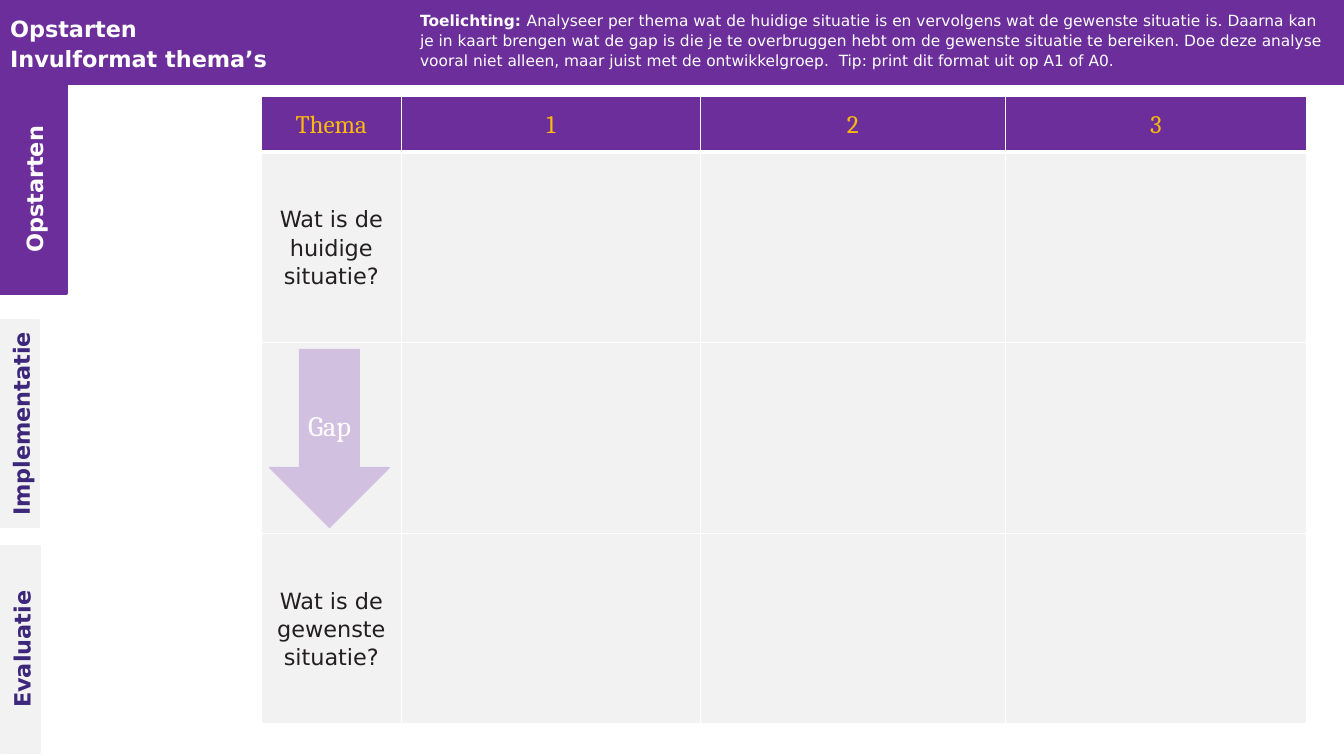
from dataclasses import dataclass

from lxml.etree import SubElement
from pptx import Presentation
from pptx.dml.color import RGBColor
from pptx.enum.shapes import MSO_SHAPE as Shape
from pptx.enum.text import MSO_ANCHOR as Anchor, MSO_AUTO_SIZE as AutoSize, PP_ALIGN as Align
from pptx.oxml.ns import qn
from pptx.util import Pt

COLORS = {
    "purple": "6C2E9B",
    "indigo": "3C277B",
    "lilac": "D2C0E0",
    "gray": "F2F2F2",
    "gold": "FAB90B",
    "ink": "231F20",
    "white": "FFFFFF",
}
SANS, SERIF = "DejaVu Sans", "Cambria"


@dataclass
class TextStyle:
    size: float
    color: str
    font: str = SANS
    bold: bool = False
    align: Align = Align.CENTER


@dataclass
class Block:
    text: str
    left: float
    top: float
    width: float
    height: float
    fill: str
    style: TextStyle
    line_width: float = 1
    shape: Shape = Shape.RECTANGLE
    vertical: bool = True


TITLE = TextStyle(16, "white", bold=True, align=Align.LEFT)
NOTE = TextStyle(11, "white", align=Align.LEFT)
HEADER = TextStyle(18, "gold", SERIF)
QUESTION = TextStyle(16, "ink")
ACTIVE_TAB = TextStyle(16, "white", bold=True)
TAB = TextStyle(16, "indigo", bold=True)

TABS = [
    Block("Implementatie", 0, 228.5, 28, 148.5, "gray", TAB),
    Block("Evaluatie", 0.5, 389.5, 28, 148.5, "gray", TAB),
    Block("Opstarten", 0, 61, 47, 148.5, "purple", ACTIVE_TAB, line_width=3),
]
GAP_ARROW = Block("Gap", 192.7, 249.7, 85.3, 127, "lilac", TextStyle(20, "white", SERIF),
                  shape=Shape.DOWN_ARROW, vertical=False)

ROWS = [
    ["Thema", "1", "2", "3"],
    ["Wat is de huidige situatie?", "", "", ""],
    ["", "", "", ""],
    ["Wat is de gewenste situatie?", "", "", ""],
]
COLUMN_WIDTHS = [100.4, 213.4, 218, 215]
ROW_HEIGHTS = [39.4, 136.2, 136.2, 136.2]


def rgb(name: str) -> RGBColor:
    return RGBColor.from_string(COLORS[name])


def style_text(tf, style: TextStyle) -> None:
    for p in tf.paragraphs:
        p.alignment = style.align
        p.line_spacing = 1.1
        for r in p.runs:
            r.font.name = style.font
            r.font.size = Pt(style.size)
            r.font.bold = style.bold
            r.font.color.rgb = rgb(style.color)


def paint(sp, color: str, line_width: float) -> None:
    sp.fill.solid()
    sp.fill.fore_color.rgb = rgb(color)
    sp.line.color.rgb = rgb(color)
    sp.line.width = Pt(line_width)


def place(sp, left: float, top: float, width: float, height: float) -> None:
    sp.left, sp.top, sp.width, sp.height = map(Pt, (left, top, width, height))


def add_title(slide) -> None:
    sp = slide.shapes.title
    place(sp, 0, 0, 960, 60.5)
    paint(sp, "purple", 1)
    tf = sp.text_frame
    tf.text = "Opstarten\nInvulformat thema’s"
    tf.auto_size = AutoSize.NONE
    tf.vertical_anchor = Anchor.MIDDLE
    style_text(tf, TITLE)


def add_block(slide, block: Block) -> None:
    sp = slide.shapes.add_shape(block.shape, Pt(block.left), Pt(block.top),
                                Pt(block.width), Pt(block.height))
    sp.shadow.inherit = False
    paint(sp, block.fill, block.line_width)
    tf = sp.text_frame
    tf.text = block.text
    tf.word_wrap = True
    tf.vertical_anchor = Anchor.MIDDLE
    if block.vertical:
        tf._txBody.bodyPr.set("vert", "vert270")
    else:
        tf.margin_left = tf.margin_right = tf.margin_top = tf.margin_bottom = Pt(3)
    style_text(tf, block.style)


def add_explanation(slide) -> None:
    tf = slide.shapes.add_textbox(Pt(293), Pt(3), Pt(668), Pt(50)).text_frame
    tf.word_wrap = True
    tf.auto_size = AutoSize.SHAPE_TO_FIT_TEXT
    p = tf.paragraphs[0]
    label, body = p.add_run(), p.add_run()
    label.text = "Toelichting: "
    body.text = (
        "Analyseer per thema wat de huidige situatie is en vervolgens wat de gewenste "
        "situatie is. Daarna kan je in kaart brengen wat de gap is die je te overbruggen "
        "hebt om de gewenste situatie te bereiken. Doe deze analyse vooral niet alleen, "
        "maar juist met de ontwikkelgroep.  Tip: print dit format uit op A1 of A0."
    )
    style_text(tf, NOTE)
    label.font.bold = True


def set_borders(cell, top: float, bottom: float) -> None:
    """Draw white cell borders; they must precede the fill in the cell properties."""
    tcPr = cell._tc.get_or_add_tcPr()
    widths = {"a:lnL": 1, "a:lnR": 1, "a:lnT": top, "a:lnB": bottom}
    for i, (tag, width) in enumerate(widths.items()):
        ln = SubElement(tcPr, qn(tag), w=str(Pt(width)))
        SubElement(SubElement(ln, qn("a:solidFill")), qn("a:srgbClr"), val=COLORS["white"])
        tcPr.insert(i, ln)


def add_theme_table(slide) -> None:
    table = slide.shapes.add_table(len(ROWS), len(COLUMN_WIDTHS), Pt(186.5), Pt(69.1),
                                   Pt(sum(COLUMN_WIDTHS)), Pt(sum(ROW_HEIGHTS))).table
    table.first_row = table.horz_banding = False
    for column, width in zip(table.columns, COLUMN_WIDTHS):
        column.width = Pt(width)
    for i, (row, height) in enumerate(zip(table.rows, ROW_HEIGHTS)):
        row.height = Pt(height)
        for cell, text in zip(row.cells, ROWS[i]):
            cell.text = text
            cell.vertical_anchor = Anchor.MIDDLE
            cell.fill.solid()
            cell.fill.fore_color.rgb = rgb("gray" if i else "purple")
            set_borders(cell, top=3 if i == 1 else 1, bottom=3 if i == 0 else 1)
            style_text(cell.text_frame, QUESTION if i else HEADER)


def main() -> None:
    prs = Presentation()
    prs.slide_width, prs.slide_height = Pt(960), Pt(540)
    slide = prs.slides.add_slide(prs.slide_layouts.get_by_name("Title Only"))
    add_title(slide)
    for tab in TABS:
        add_block(slide, tab)
    add_explanation(slide)
    add_theme_table(slide)
    add_block(slide, GAP_ARROW)
    prs.save("out.pptx")


if __name__ == "__main__":
    main()
